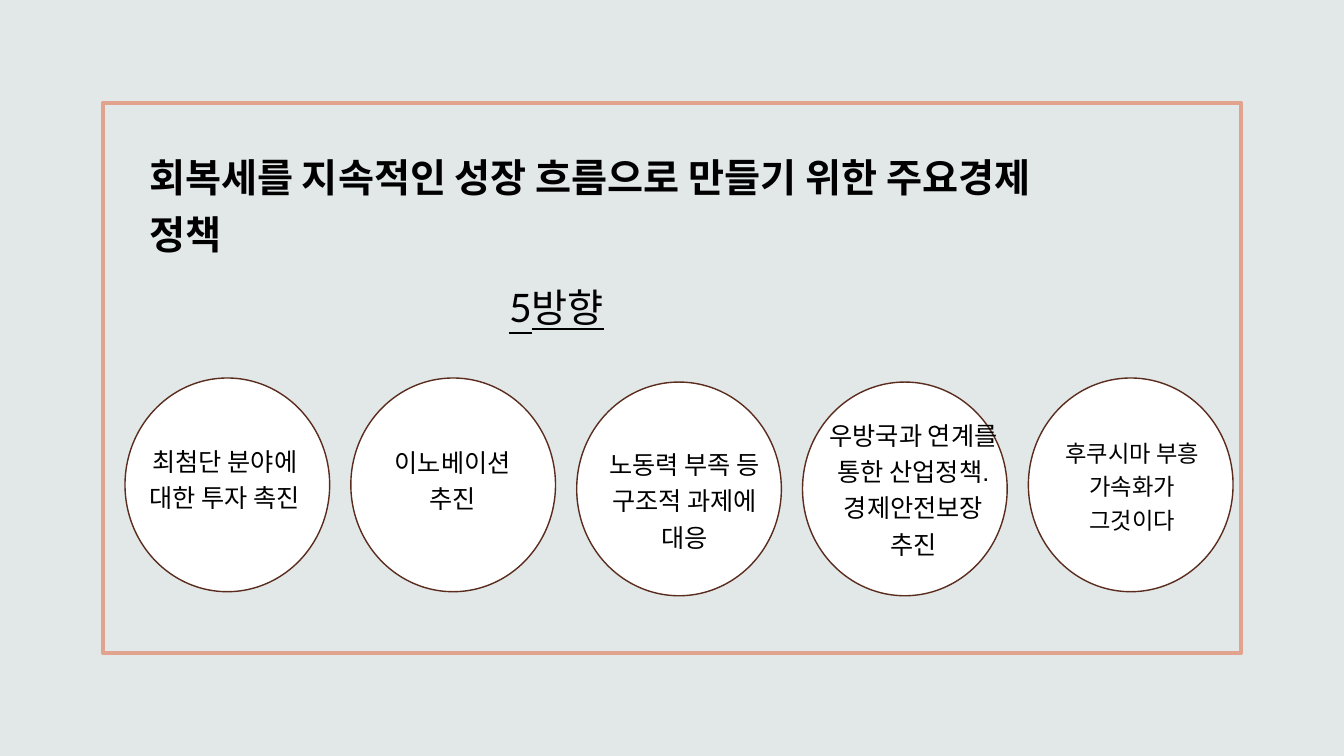
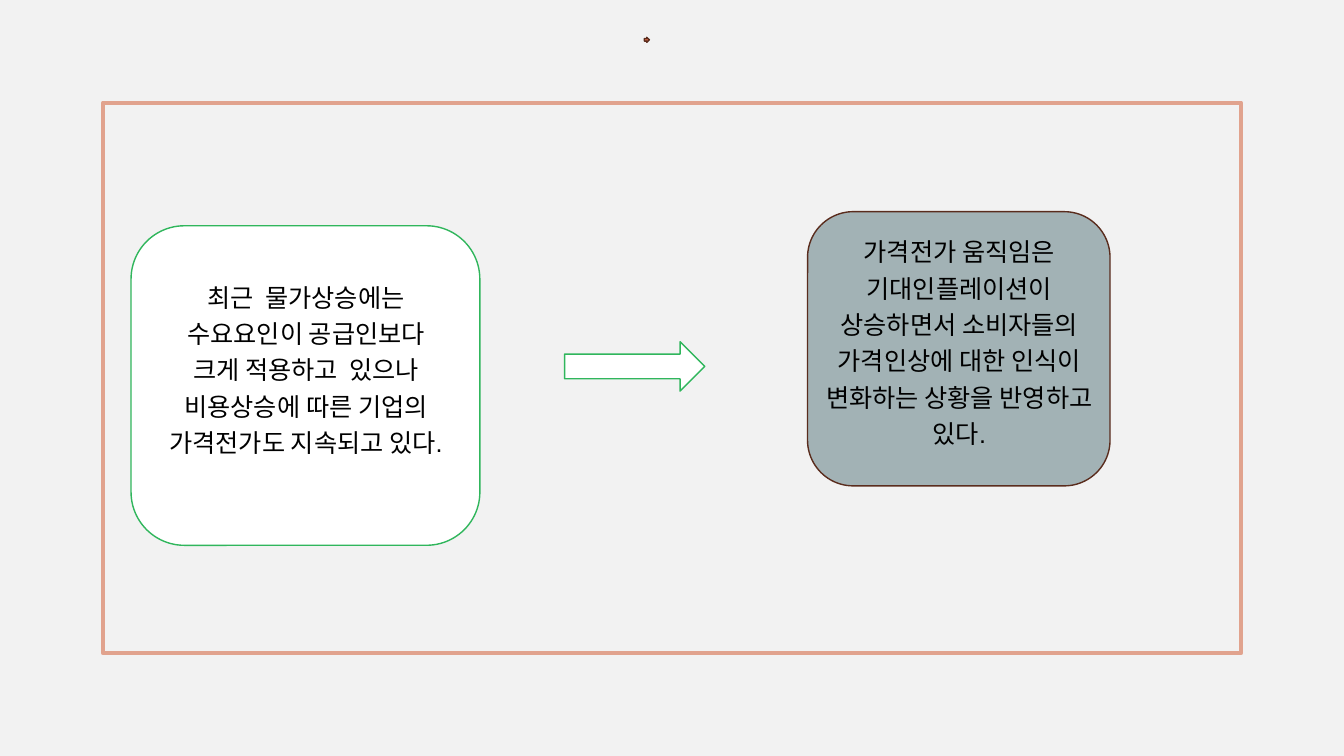
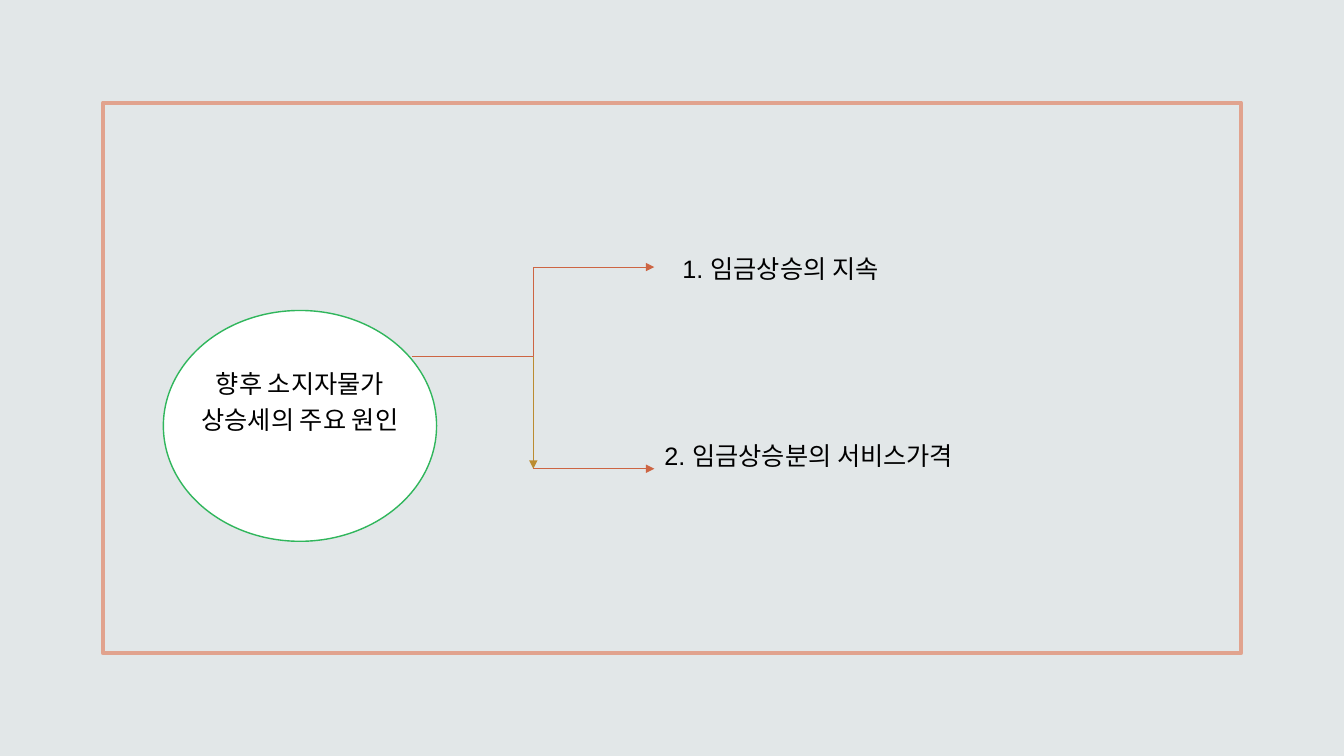
from lxml.etree import SubElement
from pptx import Presentation
from pptx.dml.color import RGBColor
from pptx.enum.shapes import MSO_CONNECTOR, MSO_SHAPE
from pptx.enum.text import PP_ALIGN
from pptx.oxml.ns import qn
from pptx.util import Inches, Pt

COLORS = {
    "mist": "E2E7E8",
    "pale": "F2F2F2",
    "frame": "E1A38E",
    "brown": "5A2C1D",
    "green": "30B65C",
    "slate": "A2B2B5",
    "orange": "CD6543",
    "ochre": "BB8C31",
    "white": "FFFFFF",
    "black": "000000",
}
FRAME = (1.02, 1.02, 11.29, 5.46)

DIRECTIONS = [
    ("최첨단 분야에 대한 투자 촉진", 0, (0.09, 0.57, 1.8, 1.2), 18),
    ("이노베이션 추진", 0, (0.11, 0.58, 1.8, 1.2), 18),
    ("노동력 부족 등 구조적 과제에 대응", 0.04, (0.17, 0.56, 1.8, 1.2), 18),
    ("우방국과 연계를 통한 산업정책.경제안전보장 추진", 0.04, (0.15, 0.27, 1.9, 1.73), 18),
    ("후쿠시마 부흥 가속화가 그것이다", 0, (0.15, 0.5, 1.76, 1.31), 16.6),
]


def color(name):
    return RGBColor.from_string(COLORS[name])


def inside(box, offset):
    left, top, width, height = offset
    return box[0] + left, box[1] + top, width, height


def add_outline(page, kind, box, line, fill=None, weight=1):
    shape = page.shapes.add_shape(kind, *map(Inches, box))
    shape.shadow.inherit = False
    if fill:
        shape.fill.solid()
        shape.fill.fore_color.rgb = color(fill)
    else:
        shape.fill.background()
    shape.line.color.rgb = color(line)
    shape.line.width = Pt(weight)


def add_text(page, box, text, size=18, font="Arial", align=PP_ALIGN.CENTER,
             bold=False, underline=False):
    frame = page.shapes.add_textbox(*map(Inches, box)).text_frame
    frame.word_wrap = True
    frame.text = text
    para = frame.paragraphs[0]
    para.alignment = align
    para.line_spacing = 1.2
    para.space_before = Pt(10)
    for span in para.runs:
        span.font.name = font
        span.font.size = Pt(size)
        span.font.bold = bold
        span.font.underline = underline
        span.font.color.rgb = color("black")


def add_heading(page, box, text, **style):
    add_text(page, box, text, size=28, font="Lato", align=PP_ALIGN.LEFT, **style)


def add_arrow(page, kind, start, end, line):
    arrow = page.shapes.add_connector(kind, *map(Inches, start + end))
    arrow.line.color.rgb = color(line)
    arrow.line.width = Pt(0.5)
    properties = arrow.element.spPr
    SubElement(properties.find(qn("a:ln")), qn("a:tailEnd"), type="triangle")
    SubElement(properties, qn("a:effectLst"))


def add_page(deck, background):
    page = deck.slides.add_slide(deck.slide_layouts[6])
    page.background.fill.solid()
    page.background.fill.fore_color.rgb = color(background)
    add_outline(page, MSO_SHAPE.RECTANGLE, FRAME, "frame", weight=3)
    return page


def add_direction_circles(page, box):
    left, top, width, height = box
    step = 2.24
    circles = [(left + index * step, top + drop, width, height)
               for index, (_, drop, _, _) in enumerate(DIRECTIONS)]
    for circle in circles:
        add_outline(page, MSO_SHAPE.OVAL, circle, "brown", "white")
    for circle, (text, _, offset, size) in zip(circles, DIRECTIONS):
        add_text(page, inside(circle, offset), text, size)


def add_statement(page, box, line, fill, text, offset):
    add_outline(page, MSO_SHAPE.ROUNDED_RECTANGLE, box, line, fill)
    add_text(page, inside(box, offset), text)


def add_cause_tree(page, box):
    left, top, _, _ = box
    add_outline(page, MSO_SHAPE.OVAL, box, "green", "white")
    add_text(page, inside(box, (0.24, 0.46, 2.23, 1.37)), "향후 소지자물가 상승세의 주요 원인")
    start_x, branch_x, end_x = left + 2.47, left + 3.67, left + 4.87
    upper, middle, lower = top - 0.43, top + 0.46, top + 1.57
    add_arrow(page, MSO_CONNECTOR.ELBOW, (start_x, middle), (end_x, upper), "orange")
    add_arrow(page, MSO_CONNECTOR.STRAIGHT, (branch_x, middle), (branch_x, lower), "ochre")
    add_arrow(page, MSO_CONNECTOR.STRAIGHT, (branch_x, lower), (end_x, lower), "orange")
    causes = [("1. 임금상승의 지속", 5.05, -0.68), ("2. 임금상승분의 서비스가격", 4.87, 1.18)]
    for text, across, down in causes:
        add_text(page, inside(box, (across, down, 5.32, 0.97)), text, align=PP_ALIGN.LEFT)


def build_directions(deck):
    page = add_page(deck, "mist")
    add_heading(page, inside(FRAME, (0.36, 0.36, 8.97, 1.52)),
                "회복세를 지속적인 성장 흐름으로 만들기 위한 주요경제 정책", bold=True)
    add_heading(page, inside(FRAME, (3.93, 1.65, 1.82, 0.84)), "5방향", underline=True)
    add_direction_circles(page, (1.24, 3.75, 2.03, 2.12))


def build_price_shift(deck):
    page = add_page(deck, "pale")
    add_statement(page, (1.3, 2.24, 3.46, 3.17), "green", "white",
                  "최근  물가상승에는 수요요인이 공급인보다 크게 적용하고  있으나 "
                  "비용상승에 따른 기업의 가격전가도 지속되고 있다.",
                  (0.28, 0.45, 2.91, 2.42))
    add_outline(page, MSO_SHAPE.RIGHT_ARROW, (6.39, 0.37, 0.05, 0.05), "brown", "orange")
    add_outline(page, MSO_SHAPE.RIGHT_ARROW, (5.6, 3.39, 1.39, 0.49), "green", "white")
    add_statement(page, (8.01, 2.1, 3, 2.72), "brown", "slate",
                  "가격전가 움직임은 기대인플레이션이 상승하면서 소비자들의 "
                  "가격인상에 대한 인식이 변화하는 상황을 반영하고 있다.",
                  (-0.08, 0.14, 3.17, 2.44))


def build_causes(deck):
    page = add_page(deck, "mist")
    add_cause_tree(page, (1.62, 3.08, 2.71, 2.29))


def main():
    deck = Presentation()
    deck.slide_width = Inches(13.33)
    deck.slide_height = Inches(7.5)
    build_directions(deck)
    build_price_shift(deck)
    build_causes(deck)
    deck.save("out.pptx")


if __name__ == "__main__":
    main()
